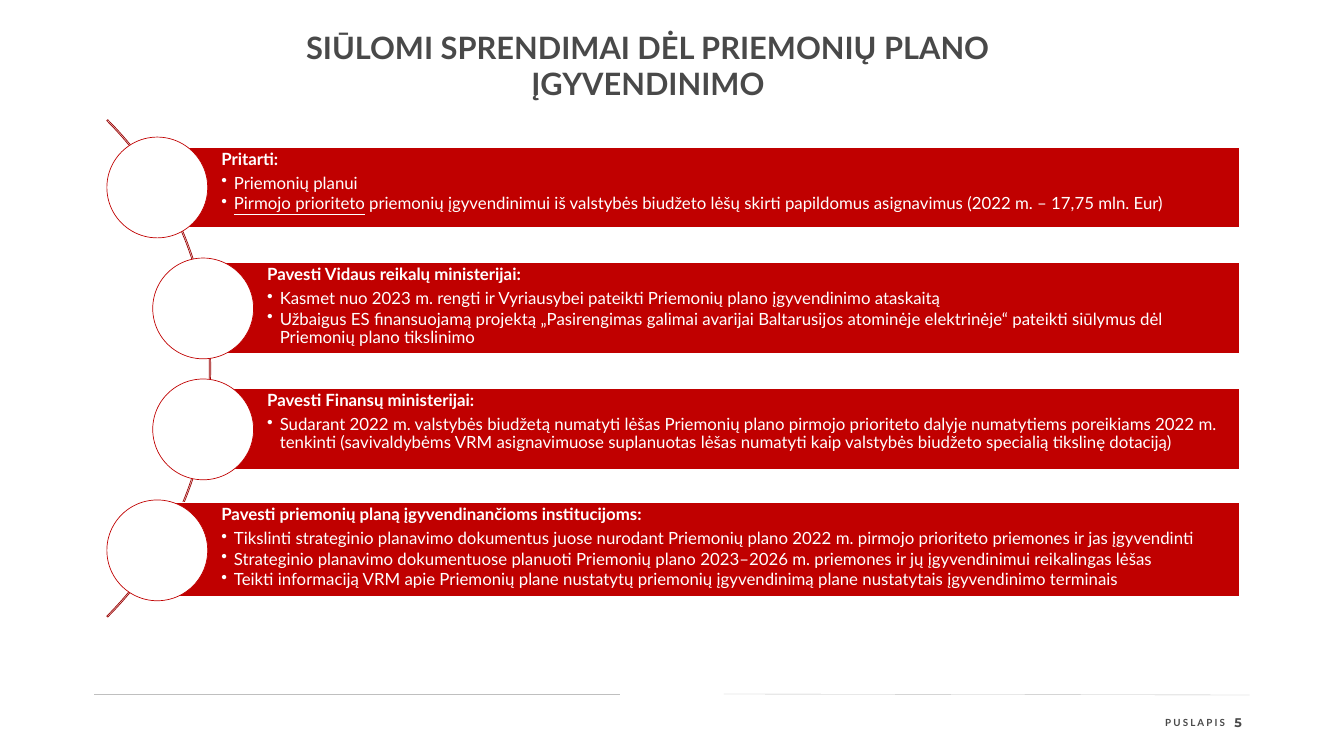
from lxml import etree
from pptx import Presentation
from pptx.dml.color import RGBColor
from pptx.enum.shapes import MSO_CONNECTOR, MSO_SHAPE
from pptx.enum.text import MSO_ANCHOR, MSO_AUTO_SIZE, PP_ALIGN
from pptx.oxml.ns import qn
from pptx.util import Inches, Pt

ARC, RECT, OVAL = MSO_SHAPE.BLOCK_ARC, MSO_SHAPE.RECTANGLE, MSO_SHAPE.OVAL
LINE = MSO_CONNECTOR.STRAIGHT
TOP, MID = MSO_ANCHOR.TOP, MSO_ANCHOR.MIDDLE
LEFT, MIDST, RIGHT = PP_ALIGN.LEFT, PP_ALIGN.CENTER, PP_ALIGN.RIGHT
NOFIT = MSO_AUTO_SIZE.NONE

RED = RGBColor(0xC0, 0x00, 0x00)
DARK = RGBColor(0x9A, 0x00, 0x00)
GRAY = RGBColor(0x49, 0x49, 0x49)
PALE = RGBColor(0xBF, 0xBF, 0xBF)
WHITE = RGBColor(0xFF, 0xFF, 0xFF)

HEAD = {"name": "Lato", "size": Pt(44), "bold": True}
PAGE = {"name": "Lato", "size": Pt(14), "bold": True}
NUM = {"name": "Montserrat", "size": Pt(18), "bold": True}
LEAD = {"name": "Lato", "size": Pt(24), "bold": True}
ITEM = {"name": "Lato", "size": Pt(24), "bold": False}


def style(font, look, color):
    for key, value in look.items():
        setattr(font, key, value)
    font.color.rgb = color


def draw(kind, box, fill, edge):
    shape = slide.shapes.add_shape(kind, *map(Inches, box))
    shape.shadow.inherit = False
    if fill is None:
        shape.fill.background()
    else:
        shape.fill.solid()
        shape.fill.fore_color.rgb = fill
    shape.line.color.rgb = edge
    shape.line.width = Pt(1)
    return shape


prs = Presentation()
prs.slide_width, prs.slide_height = Inches(26.66), Inches(15)
slide = prs.slides.add_slide(prs.slide_layouts[5])

for x1, y1, x2, y2 in [(1.87, 13.78, 12.3, 13.78), (14.36, 13.77, 24.79, 13.79)]:
    rule = slide.shapes.add_connector(LINE, Inches(x1), Inches(y1), Inches(x2), Inches(y2))
    rule.line.color.rgb = PALE
    rule.line.width = Pt(0.5)
    etree.SubElement(rule._element.spPr, qn("a:effectLst"))

title = slide.shapes.title
title.left, title.top = Inches(5.96), Inches(0.51)
title.width, title.height = Inches(13.79), Inches(1.58)
title.text_frame.text = "SIŪLOMI SPRENDIMAI DĖL PRIEMONIŲ PLANO ĮGYVENDINIMO"
title.text_frame.vertical_anchor = TOP
title.text_frame.auto_size = NOFIT
para = title.text_frame.paragraphs[0]
para.alignment = MIDST
style(para.runs[0].font, HEAD, GRAY)

footer = [
    ("5", (24.13, 14.08, 0.86, 0.5), (0.2, 0.1), TOP, MIDST, NUM, 0),
    ("PUSLAPIS", (23.07, 14.21, 1.23, 0.24), (0, 0), MID, RIGHT, PAGE, 300),
]
for text, box, (side, edge), anchor, align, look, gap in footer:
    frame = slide.shapes.add_textbox(*map(Inches, box)).text_frame
    frame.word_wrap = False
    frame.vertical_anchor = anchor
    frame.margin_left = frame.margin_right = Inches(side)
    frame.margin_top = frame.margin_bottom = Inches(edge)
    para = frame.paragraphs[0]
    para.alignment = align
    run = para.add_run()
    run.text = text
    style(run.font, look, GRAY)
    run.font._element.set("spc", str(gap))

arc = draw(ARC, (-9.78, 0.33, 13.96, 13.96), None, DARK)
for i, value in enumerate((189, 27, 0.002)):
    arc.adjustments[i] = value

DISC, END = 2, 24.58
MARK = "Pirmojo prioriteto"
bands = [
    (3.12, 2.92, 1.6, "Pritarti:", [
        "Priemonių planui",
        "Pirmojo prioriteto priemonių įgyvendinimui iš valstybės biudžeto lėšų skirti "
        "papildomus asignavimus (2022 m. – 17,75 mln. Eur)",
    ]),
    (4.03, 5.21, 1.81, "Pavesti Vidaus reikalų ministerijai:", [
        "Kasmet nuo 2023 m. rengti ir Vyriausybei pateikti Priemonių plano įgyvendinimo ataskaitą",
        "Užbaigus ES finansuojamą projektą „Pasirengimas galimai avarijai Baltarusijos "
        "atominėje elektrinėje“ pateikti siūlymus dėl Priemonių plano tikslinimo",
    ]),
    (4.03, 7.71, 1.6, "Pavesti Finansų ministerijai:", [
        "Sudarant 2022 m. valstybės biudžetą numatyti lėšas Priemonių plano pirmojo prioriteto "
        "dalyje numatytiems poreikiams 2022 m. tenkinti (savivaldybėms VRM asignavimuose "
        "suplanuotas lėšas numatyti kaip valstybės biudžeto specialią tikslinę dotaciją)",
    ]),
    (3.12, 9.97, 1.87, "Pavesti priemonių planą įgyvendinančioms institucijoms:", [
        "Tikslinti strateginio planavimo dokumentus juose nurodant Priemonių plano 2022 m. "
        "pirmojo prioriteto priemones ir jas įgyvendinti",
        "Strateginio planavimo dokumentuose planuoti Priemonių plano 2023–2026 m. priemones "
        "ir jų įgyvendinimui reikalingas lėšas",
        "Teikti informaciją VRM apie Priemonių plane nustatytų priemonių įgyvendinimą plane "
        "nustatytais įgyvendinimo terminais",
    ]),
]
for row, (left, top, height, lead, items) in enumerate(bands):
    band = draw(RECT, (left, top, END - left, height), RED, WHITE)
    frame = band.text_frame
    frame.word_wrap = True
    frame.vertical_anchor = TOP
    frame.margin_left = Inches(1.27)
    frame.margin_right = frame.margin_top = frame.margin_bottom = Inches(0.07)
    for i, text in enumerate([lead] + items):
        para = frame.add_paragraph() if i else frame.paragraphs[0]
        if i:
            para.level = 1
            props = para._p.get_or_add_pPr()
            props.set("marL", str(Inches(0.25)))
            props.set("indent", str(Inches(-0.25)))
            etree.SubElement(props, qn("a:buChar")).set("char", "•")
        para.alignment = LEFT
        para.line_spacing = 0.9
        para.space_after = Pt(3.6 if i else 8.4)
        marked = text.startswith(MARK)
        parts = [MARK, text[len(MARK):]] if marked else [text]
        for k, part in enumerate(parts):
            run = para.add_run()
            run.text = part
            style(run.font, ITEM if i else LEAD, WHITE)
            if marked and k == 0:
                run.font.underline = True
    draw(OVAL, (left - DISC / 2, 2.72 + 2.4 * row, DISC, DISC), WHITE, RED)

prs.save("out.pptx")
